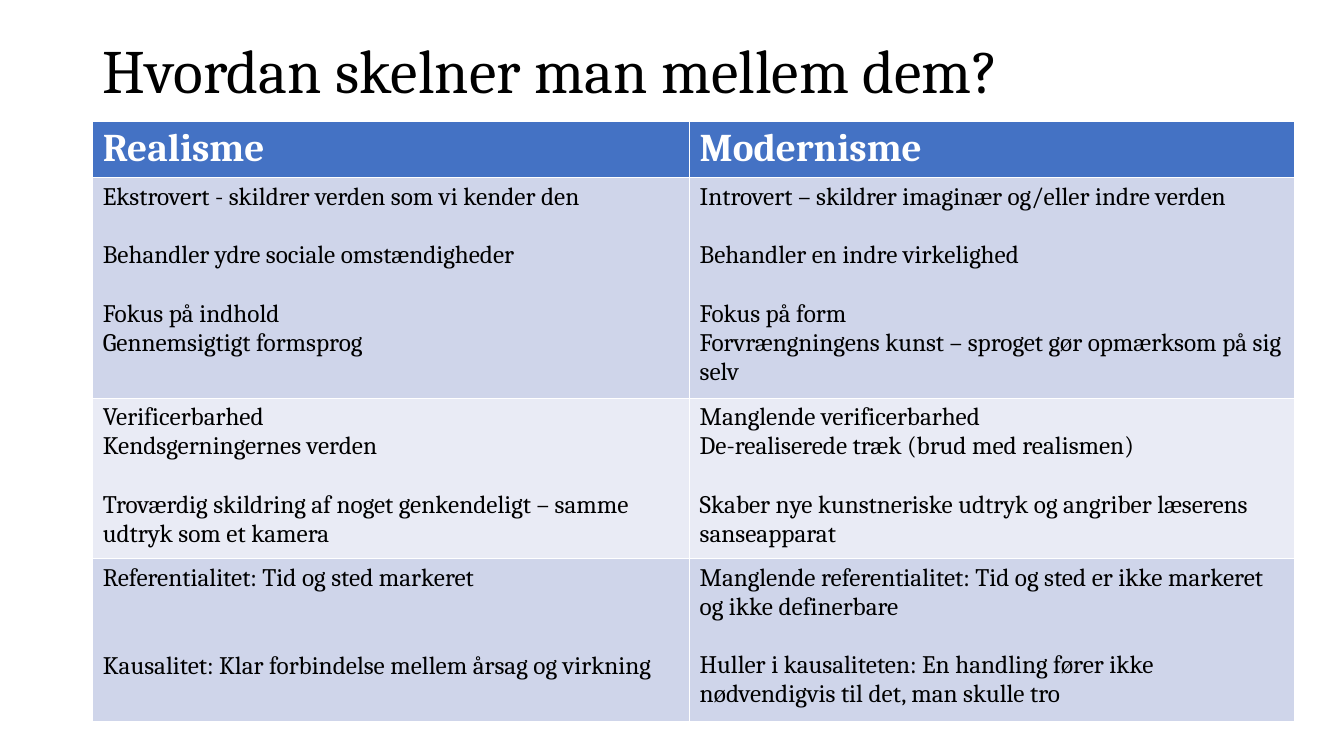
from pptx import Presentation
from pptx.dml.color import RGBColor
from pptx.enum.text import MSO_ANCHOR, MSO_AUTO_SIZE, PP_ALIGN
from pptx.util import Inches, Pt

TITLE = "Hvordan skelner man mellem dem?"
HEADERS = ["Realisme", "Modernisme"]
# Each paragraph: (text, number of lines of space above it)
ROWS = [
    ([("Ekstrovert - skildrer verden som vi kender den", 0),
      ("Behandler ydre sociale omstændigheder", 1),
      ("Fokus på indhold", 1),
      ("Gennemsigtigt formsprog", 0)],
     [("Introvert – skildrer imaginær og/eller indre verden", 0),
      ("Behandler en indre virkelighed", 1),
      ("Fokus på form", 1),
      ("Forvrængningens kunst – sproget gør opmærksom på sig selv", 0)]),
    ([("Verificerbarhed", 0),
      ("Kendsgerningernes verden", 0),
      ("Troværdig skildring af noget genkendeligt – samme udtryk som et kamera", 1)],
     [("Manglende verificerbarhed", 0),
      ("De-realiserede træk (brud med realismen)", 0),
      ("Skaber nye kunstneriske udtryk og angriber læserens sanseapparat", 1)]),
    ([("Referentialitet: Tid og sted markeret", 0),
      ("Kausalitet: Klar forbindelse mellem årsag og virkning", 2)],
     [("Manglende referentialitet: Tid og sted er ikke markeret og ikke definerbare", 0),
      ("Huller i kausaliteten: En handling fører ikke nødvendigvis til det, "
       "man skulle tro", 1)]),
]

FONT = "Cambria"
LINE_PT = 21
COL_WIDTHS = [5.92, 6]
ROW_HEIGHTS = [0.56, 2.19, 1.59, 1.62]
BLACK = RGBColor(0x00, 0x00, 0x00)
WHITE = RGBColor(0xFF, 0xFF, 0xFF)
BLUE = RGBColor(0x44, 0x72, 0xC4)
BANDS = [RGBColor(0xCF, 0xD5, 0xEA), RGBColor(0xE9, 0xEB, 0xF5)]
LEFT = PP_ALIGN.LEFT
MIDDLE = MSO_ANCHOR.MIDDLE
NO_AUTOFIT = MSO_AUTO_SIZE.NONE


def write(tf, paragraphs, size=18, color=BLACK, bold=False, line_spacing=None):
    for i, (text, gap) in enumerate(paragraphs):
        p = tf.paragraphs[0] if i == 0 else tf.add_paragraph()
        p.alignment = LEFT
        if gap:
            p.space_before = Pt(gap * LINE_PT)
        if line_spacing:
            p.line_spacing = line_spacing
        r = p.add_run()
        r.text = text
        r.font.name = FONT
        r.font.size = Pt(size)
        r.font.bold = bold
        r.font.color.rgb = color


def fill_cell(cell, color):
    cell.fill.solid()
    cell.fill.fore_color.rgb = color


prs = Presentation()
prs.slide_width, prs.slide_height = Inches(13.33), Inches(7.5)
s = prs.slides.add_slide(prs.slide_layouts[5])

title = s.shapes.title
title.left, title.top = Inches(0.92), Inches(0)
title.width, title.height = Inches(11.5), Inches(1.45)
tf = title.text_frame
tf.auto_size = NO_AUTOFIT
tf.vertical_anchor = MIDDLE
write(tf, [(TITLE, 0)], size=44, line_spacing=0.9)

table = s.shapes.add_table(len(ROWS) + 1, len(HEADERS), Inches(0.92), Inches(1.2),
                           Inches(sum(COL_WIDTHS)), Inches(sum(ROW_HEIGHTS))).table
for column, width in zip(table.columns, COL_WIDTHS):
    column.width = Inches(width)
for row, height in zip(table.rows, ROW_HEIGHTS):
    row.height = Inches(height)

for col, header in enumerate(HEADERS):
    cell = table.cell(0, col)
    fill_cell(cell, BLUE)
    write(cell.text_frame, [(header, 0)], size=28, color=WHITE, bold=True)

for i, contents in enumerate(ROWS):
    for col, paragraphs in enumerate(contents):
        cell = table.cell(i + 1, col)
        fill_cell(cell, BANDS[i % 2])
        write(cell.text_frame, paragraphs)

prs.save("out.pptx")
